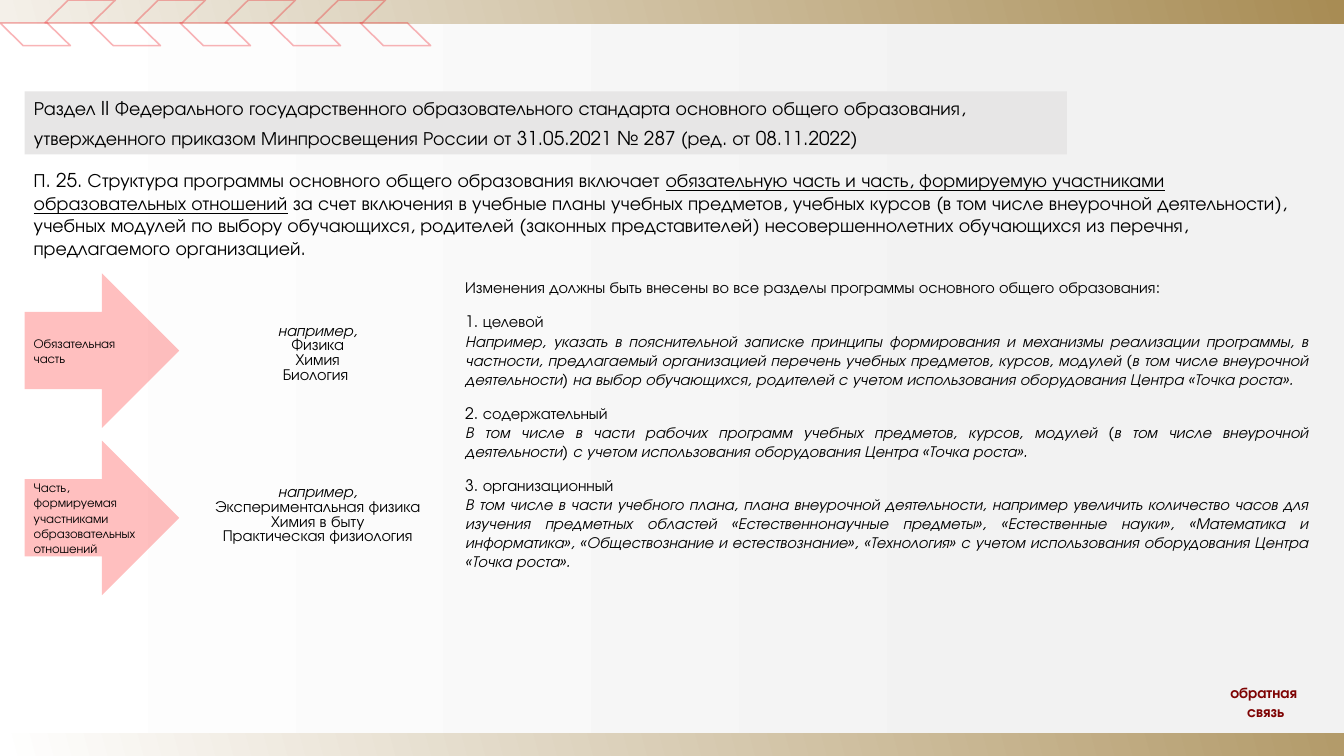
"""Builds a slide on the structure of the basic general education programme."""
from lxml.etree import SubElement
from pptx import Presentation
from pptx.dml.color import RGBColor
from pptx.enum.shapes import MSO_SHAPE
from pptx.enum.text import MSO_ANCHOR, MSO_AUTO_SIZE, PP_ALIGN
from pptx.oxml.ns import qn
from pptx.util import Inches, Pt

FONT = "TeX Gyre Adventor"
BLACK = RGBColor(0x00, 0x00, 0x00)
WHITE = RGBColor(0xFF, 0xFF, 0xFF)
GOLD = RGBColor(0xA8, 0x8C, 0x54)
PALE = RGBColor(0xF2, 0xF2, 0xF2)
GREY = RGBColor(0xE7, 0xE6, 0xE6)
RED = RGBColor(0xFF, 0x00, 0x00)
CHEVRON_RED = RGBColor(0xED, 0x1C, 0x24)
MAROON = RGBColor(0x7E, 0x03, 0x03)
NO_GRID_STYLE = "{2D5ABB26-0587-4C30-8999-92F81FD0307C}"
WIDTH, HEIGHT = 14.7, 8.27

ITALIC = {"italic": True}
CENTER = {"alignment": PP_ALIGN.CENTER}
JUSTIFY = {"alignment": PP_ALIGN.JUSTIFY}
SPACED = {**JUSTIFY, "space_before": Pt(12)}

TITLE = [
    ("Раздел II Федерального государственного образовательного стандарта основного общего образования,", {}, {}),
    ("утвержденного приказом Минпросвещения России от 31.05.2021 № 287 (ред. от 08.11.2022)", {},
     {"space_before": Pt(6)}),
]
CLAUSE = [
    ("П. 25. Структура программы основного общего образования включает ", {}),
    ("обязательную часть и часть, формируемую участниками образовательных отношений", {"underline": True}),
    (" за счет включения в учебные планы учебных предметов, учебных курсов (в том числе внеурочной "
     "деятельности), учебных модулей по выбору обучающихся, родителей (законных представителей) "
     "несовершеннолетних обучающихся из перечня, предлагаемого организацией.", {}),
]
PARTS = [
    (2.99, 3.62, 0.44, ["Обязательная", "часть"]),
    (4.82, 5.2, 0.94, ["Часть,", "формируемая участниками образовательных отношений"]),
]
EXAMPLES = [
    ["Физика", "Химия", "Биология "],
    ["Экспериментальная физика", "Химия в быту", "Практическая физиология"],
]
SECTIONS = [
    ("1. целевой",
     "Например, указать в пояснительной записке принципы формирования и механизмы реализации программы, "
     "в частности, предлагаемый организацией перечень учебных предметов, курсов, модулей (в том числе "
     "внеурочной деятельности) на выбор обучающихся, родителей с учетом использования оборудования "
     "Центра «Точка роста»."),
    ("2. содержательный",
     "В том числе в части рабочих программ учебных предметов, курсов, модулей (в том числе внеурочной "
     "деятельности) с учетом использования оборудования Центра «Точка роста»."),
    ("3. организационный",
     "В том числе в части учебного плана, плана внеурочной деятельности, например увеличить количество "
     "часов для изучения предметных областей «Естественнонаучные предметы», «Естественные науки», "
     "«Математика и информатика», «Обществознание и естествознание», «Технология» с учетом "
     "использования оборудования Центра «Точка роста»."),
]


def apply(target, formats):
    for name, value in formats.items():
        setattr(target, name, value)


def add_run(p, text, size, color=BLACK, **formats):
    r = p.add_run()
    r.text = text
    apply(r.font, {"name": FONT, "size": Pt(size), **formats})
    r.font.color.rgb = color


def write(tf, paragraphs, size, color=BLACK):
    for i, (text, font, layout) in enumerate(paragraphs):
        p = tf.add_paragraph() if i else tf.paragraphs[0]
        apply(p, layout)
        add_run(p, text, size, color, **font)


def add_text(s, box):
    tf = s.shapes.add_textbox(*map(Inches, box)).text_frame
    tf.word_wrap = True
    return tf


def add_shape(s, kind, box):
    sp = s.shapes.add_shape(kind, *map(Inches, box))
    sp.shadow.inherit = False
    sp.line.fill.background()
    return sp


def set_alpha(sp, percent):
    for color in sp._element.spPr.iter(qn("a:srgbClr")):
        SubElement(color, qn("a:alpha")).set("val", str(percent * 1000))


def add_gradient(s, box, stops, angle):
    fill = add_shape(s, MSO_SHAPE.RECTANGLE, box).fill
    fill.gradient()
    fill.gradient_angle = angle
    for stop, (position, color) in zip(fill.gradient_stops, stops):
        stop.position = position
        stop.color.rgb = color


def add_chevron(s, i):
    box = (3.94 * i / 8, 0 if i % 2 else 0.25, 0.77, 0.25)
    sp = add_shape(s, MSO_SHAPE.PARALLELOGRAM, box)
    sp.adjustments[0] = 1.02
    sp.fill.background()
    sp.line.color.rgb = CHEVRON_RED
    sp.line.width = Pt(1.25)
    set_alpha(sp, 32)
    if i % 2 == 0:
        sp._element.spPr.find(qn("a:xfrm")).set("flipV", "1")


def add_title(s):
    title = s.shapes.title
    s.shapes._spTree.append(title._element)
    apply(title, {"left": Inches(0.27), "top": Inches(1), "width": Inches(11.4), "height": Inches(0.69)})
    title.fill.solid()
    title.fill.fore_color.rgb = GREY
    tf = title.text_frame
    apply(tf, {"word_wrap": True, "auto_size": MSO_AUTO_SIZE.NONE, "vertical_anchor": MSO_ANCHOR.TOP})
    write(tf, [(text, font, {"alignment": PP_ALIGN.LEFT, **layout}) for text, font, layout in TITLE], 15)


def add_part(s, arrow_top, text_top, text_height, lines):
    arrow = add_shape(s, MSO_SHAPE.RIGHT_ARROW, (0.27, arrow_top, 1.69, 1.69))
    arrow.fill.solid()
    arrow.fill.fore_color.rgb = RED
    set_alpha(arrow, 25)
    tf = add_text(s, (0.27, text_top, 1.69, text_height))
    write(tf, [(line, {}, {}) for line in lines], 10)


def add_examples(s):
    box = map(Inches, (1.96, 2.99, 3.03, 3.53))
    table = s.shapes.add_table(len(EXAMPLES), 1, *box).table
    apply(table, {"first_row": False, "horz_banding": False})
    table._tbl.tblPr.find(qn("a:tableStyleId")).text = NO_GRID_STYLE
    for cell, subjects in zip(table.iter_cells(), EXAMPLES):
        cell.fill.background()
        cell.vertical_anchor = MSO_ANCHOR.MIDDLE
        lines = [("например,", ITALIC, CENTER)] + [(name, {}, CENTER) for name in subjects]
        write(cell.text_frame, lines, 12.5)


def add_sections(s):
    paragraphs = [("Изменения должны быть внесены во все разделы программы основного общего образования:",
                   {}, JUSTIFY)]
    for heading, body in SECTIONS:
        paragraphs += [(heading, {}, SPACED), (body, ITALIC, JUSTIFY)]
    write(add_text(s, (4.99, 2.99, 9.42, 3.55)), paragraphs, 12.5)


def main():
    prs = Presentation()
    prs.slide_width, prs.slide_height = Inches(WIDTH), Inches(HEIGHT)
    s = prs.slides.add_slide(prs.slide_layouts[5])
    add_gradient(s, (0, 0, WIDTH, HEIGHT), [(0, WHITE), (1, GOLD)], 15)
    add_gradient(s, (0, 0.26, WIDTH, 7.76), [(0, WHITE), (0.77, PALE)], 0)
    feedback = [("обратная ", {"bold": True}, CENTER), ("связь", {"bold": True}, CENTER)]
    write(add_text(s, (13.27, 7.43, 1.15, 0.5)), feedback, 12, MAROON)
    for i in range(9):
        add_chevron(s, i)
    add_title(s)
    clause = add_text(s, (0.27, 1.79, 14.15, 1.11)).paragraphs[0]
    for text, font in CLAUSE:
        add_run(clause, text, 15, **font)
    add_examples(s)
    for part in PARTS:
        add_part(s, *part)
    add_sections(s)
    prs.save("out.pptx")


if __name__ == "__main__":
    main()
